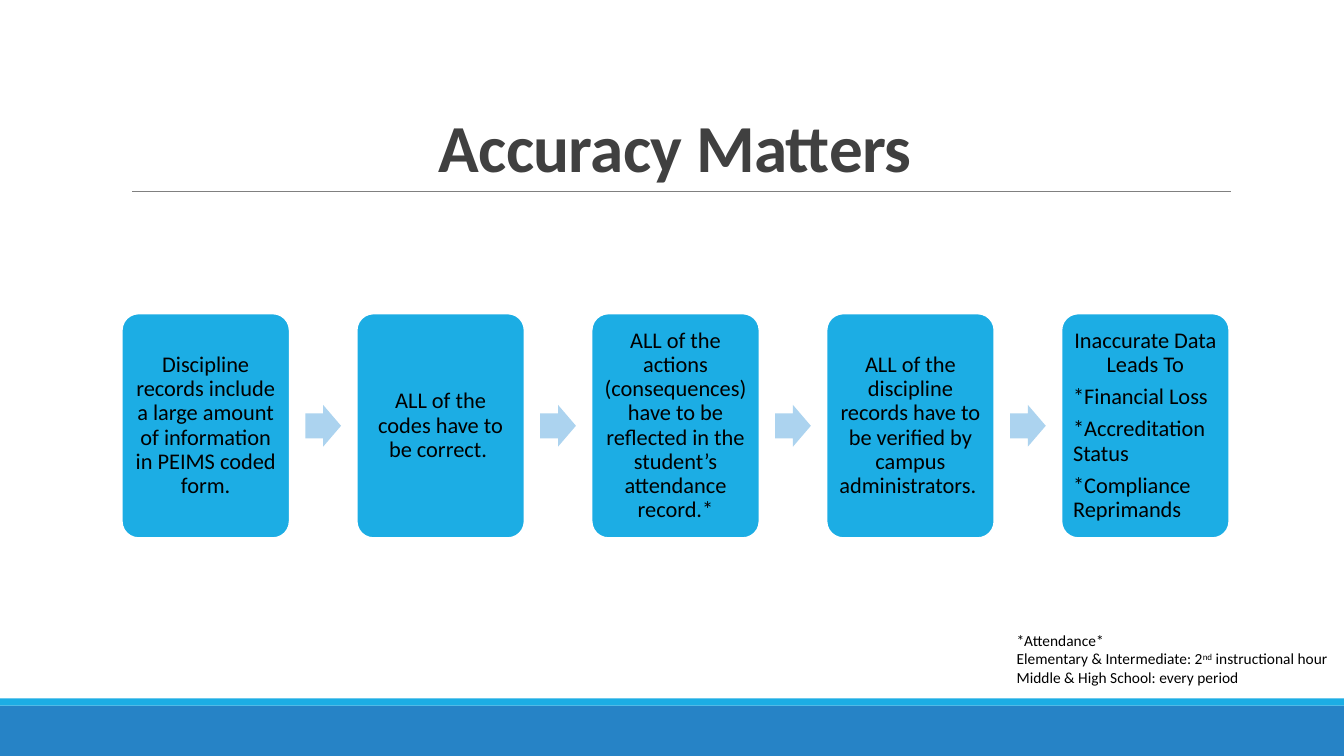
from lxml import etree
from pptx import Presentation
from pptx.dml.color import RGBColor
from pptx.enum.shapes import MSO_CONNECTOR, MSO_SHAPE
from pptx.enum.text import MSO_ANCHOR, PP_ALIGN
from pptx.oxml.ns import qn
from pptx.util import Cm, Pt

RECT, ROUNDED, ARROW = MSO_SHAPE.RECTANGLE, MSO_SHAPE.ROUNDED_RECTANGLE, MSO_SHAPE.RIGHT_ARROW
STRAIGHT = MSO_CONNECTOR.STRAIGHT
LEFT, CENTER = PP_ALIGN.LEFT, PP_ALIGN.CENTER
TOP, MIDDLE, BOTTOM = MSO_ANCHOR.TOP, MSO_ANCHOR.MIDDLE, MSO_ANCHOR.BOTTOM

COLORS = {
    "band": "2683C6",
    "accent": "1CADE4",
    "arrow": "ACD3EF",
    "rule": "808080",
    "title": "404040",
    "text": "000000",
    "white": "FFFFFF",
}
FONT = "Calibri"
SLIDE_W, SLIDE_H = 33.87, 19.05

STEPS = [
    ["Discipline records include a large amount of information in PEIMS coded form."],
    ["ALL of the codes have to be correct. "],
    ["ALL of the actions (consequences) have to be reflected in the student’s attendance record.*"],
    ["ALL of the discipline records have to be verified by campus administrators. "],
    ["Inaccurate Data Leads To", "*Financial Loss", "*Accreditation Status", "*Compliance Reprimands"],
]
ATTENDANCE_NOTE = [
    ["*Attendance*"],
    ["Elementary & Intermediate: 2", "nd", " instructional hour"],
    ["Middle & High School: every period"],
]


def color(name):
    return RGBColor.from_string(COLORS[name])


def add_filled(slide, kind, box, fill):
    shape = slide.shapes.add_shape(kind, *map(Cm, box))
    shape.shadow.inherit = False
    shape.fill.solid()
    shape.fill.fore_color.rgb = color(fill)
    shape.line.fill.background()
    return shape


def set_frame(frame, anchor, inset_x=0.25, inset_y=0.13, wrap=True):
    frame.word_wrap = wrap
    frame.vertical_anchor = anchor
    frame.margin_left = frame.margin_right = Cm(inset_x)
    frame.margin_top = frame.margin_bottom = Cm(inset_y)


def add_paragraph(frame, index, align, spacing=1.0, after=0):
    """Return the paragraph at index, using the frame's own one first."""
    paragraph = frame.add_paragraph() if index else frame.paragraphs[0]
    paragraph.alignment = align
    paragraph.line_spacing = spacing
    paragraph.space_after = Pt(after)
    return paragraph


def add_run(paragraph, text, size, ink="text", bold=False):
    run = paragraph.add_run()
    run.text = text
    run.font.name = FONT
    run.font.size = Pt(size)
    run.font.bold = bold
    run.font.color.rgb = color(ink)
    return run


def add_footer_bands(slide, left, top, width, height):
    stripe = 0.18
    add_filled(slide, RECT, (left, top + stripe, width, height - stripe), "band")
    add_filled(slide, RECT, (left, top, width, stripe), "accent")


def add_title(slide, left, top, width, height):
    """Place the heading with a thin rule along the bottom of its box."""
    heading = slide.shapes.add_textbox(*map(Cm, (left, top, width, height)))
    set_frame(heading.text_frame, BOTTOM)
    paragraph = add_paragraph(heading.text_frame, 0, CENTER, 0.85)
    run = add_run(paragraph, "Accuracy Matters", 48, "title", True)
    run.font._element.set("spc", "-50")

    start, y = left + 0.28, top + height
    rule = slide.shapes.add_connector(STRAIGHT, Cm(start), Cm(y), Cm(start + 27.69), Cm(y))
    rule.line.color.rgb = color("rule")
    rule.line.width = Pt(0.5)
    etree.SubElement(rule._element.spPr, qn("a:effectLst"))


def add_step(slide, box, lines):
    card = add_filled(slide, ROUNDED, box, "accent")
    card.adjustments[0] = 0.1
    card.line.color.rgb = color("white")
    card.line.width = Pt(1.25)
    set_frame(card.text_frame, MIDDLE, 0.17, 0.17)
    for index, line in enumerate(lines):
        paragraph = add_paragraph(card.text_frame, index, LEFT if index else CENTER, 0.9, 5.6)
        add_run(paragraph, line, 16)


def add_process(slide, left, top, width, height):
    """Spread the steps evenly, with an arrow centred in each gap."""
    card_w, arrow_w, arrow_h = 4.23, 0.9, 1.05
    pitch = (width - card_w) / (len(STEPS) - 1)
    for index, lines in enumerate(STEPS):
        x = left + index * pitch
        add_step(slide, (x, top, card_w, height), lines)
        if index < len(STEPS) - 1:
            arrow_x = x + (card_w + pitch - arrow_w) / 2
            arrow_y = top + (height - arrow_h) / 2
            arrow = add_filled(slide, ARROW, (arrow_x, arrow_y, arrow_w, arrow_h), "arrow")
            arrow.adjustments[0] = 0.6
            arrow.adjustments[1] = 0.5


def add_attendance_note(slide, left, top, width, height):
    note = slide.shapes.add_textbox(*map(Cm, (left, top, width, height)))
    set_frame(note.text_frame, TOP, wrap=False)
    for index, pieces in enumerate(ATTENDANCE_NOTE):
        paragraph = add_paragraph(note.text_frame, index, LEFT)
        for piece in pieces:
            run = add_run(paragraph, piece, 11)
            if piece == "nd":
                run.font._element.set("baseline", "30000")


def main():
    deck = Presentation()
    deck.slide_width, deck.slide_height = Cm(SLIDE_W), Cm(SLIDE_H)
    slide = deck.slides.add_slide(deck.slide_layouts[6])
    add_footer_bands(slide, 0, 17.6, SLIDE_W, SLIDE_H - 17.6)
    add_title(slide, 3.05, 0.79, 27.94, 4.04)
    add_process(slide, 3.07, 7.9, 27.91, 5.66)
    add_attendance_note(slide, 25.37, 15.77, 8.45, 1.68)
    deck.save("out.pptx")


if __name__ == "__main__":
    main()
